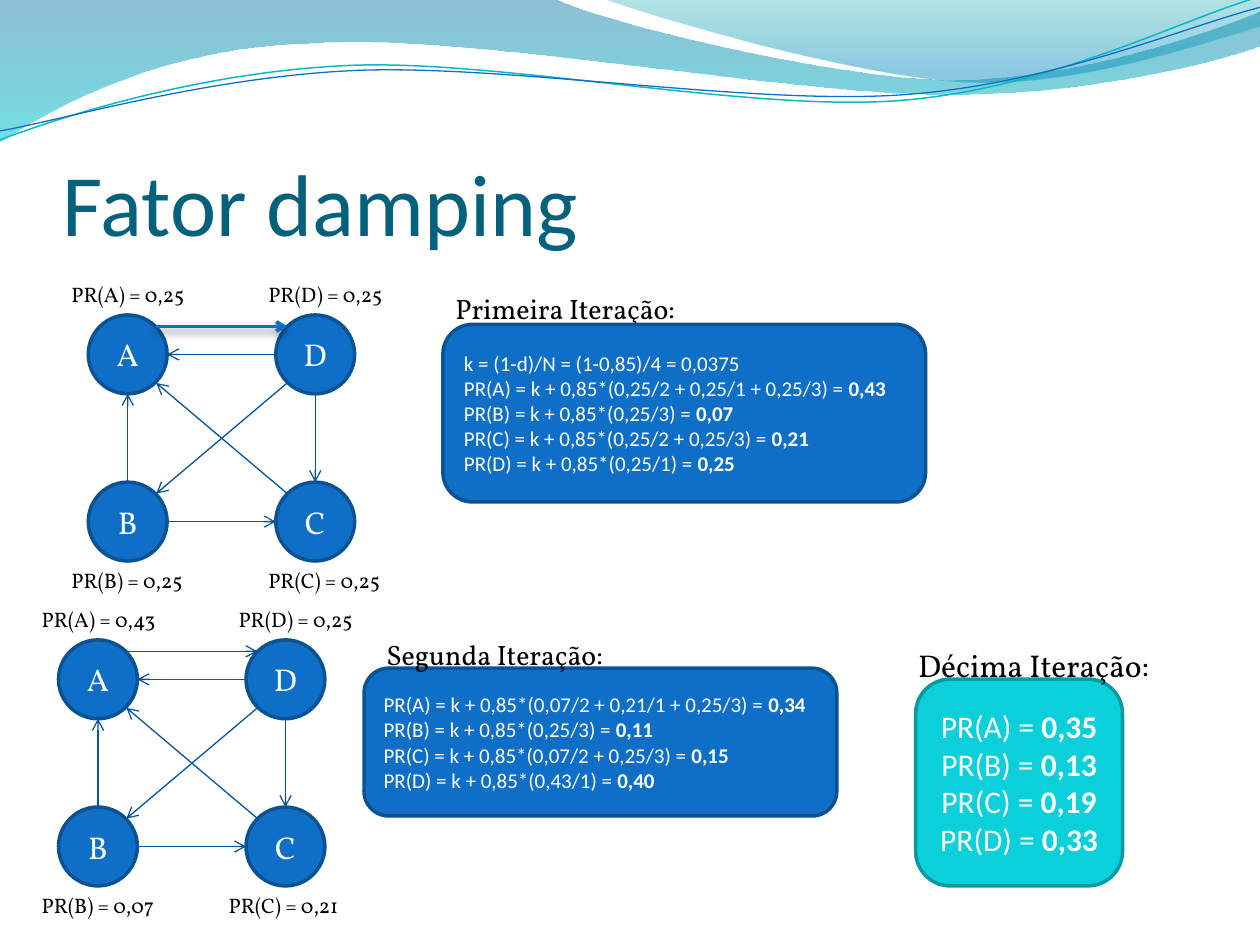
from lxml.etree import SubElement
from pptx import Presentation
from pptx.dml.color import RGBColor
from pptx.enum.shapes import MSO_CONNECTOR, MSO_SHAPE
from pptx.enum.text import MSO_ANCHOR, MSO_AUTO_SIZE, PP_ALIGN
from pptx.oxml.ns import qn
from pptx.util import Cm, Pt

INK = {
    "title": "04617B", "text": "000000", "white": "FFFFFF",
    "blue": "0F6FC6", "rim": "0B5292", "arrow": "095295",
    "cyan": "0BD0D9", "cyan rim": "089AA1", "teal": "0AB8BF",
    "sea": "0074A1", "aqua": "00C6CF", "mint": "00A1A9", "sky": "008BBF",
    "shade": "042747",
}
RGB = {name: RGBColor.from_string(code) for name, code in INK.items()}
SANS, SERIF = "Calibri", "Vollkorn"

deck = Presentation()
deck.slide_width, deck.slide_height = Cm(25.4), Cm(19.05)
slide = deck.slides.add_slide(deck.slide_layouts[6])
shapes = slide.shapes


def trace(start, parts, close):
    """Draw an outline; a part is a line end (2 numbers) or a Bézier curve (6)."""
    dots = [(Cm(x), Cm(y)) for part in parts
            for x, y in zip(part[::2], part[1::2])]
    pen = shapes.build_freeform(Cm(start[0]), Cm(start[1]))
    pen.add_line_segments(dots, close=close)
    shape = pen.convert_to_shape()
    shape.shadow.inherit = False
    legs = iter(list(shape._element.spPr.iter(qn("a:lnTo"))))
    for part in parts:
        leg = next(legs)
        if len(part) == 6:
            leg.addprevious(curve := leg.makeelement(qn("a:cubicBezTo")))
            for bit in (leg, next(legs), next(legs)):
                curve.append(bit[0])
                bit.getparent().remove(bit)
    return shape


def put(place, lines, size, font, ink, kind=None, fill=None, rim=None, mid=False):
    """Add a text box, or a filled shape of the given kind; text after | is bold."""
    box = [Cm(n) for n in place]
    if kind is None:
        shape = shapes.add_textbox(*box)
    else:
        shape = shapes.add_shape(kind, *box)
        shape.shadow.inherit = False
        shape.fill.solid()
        shape.fill.fore_color.rgb = RGB[fill]
        shape.line.color.rgb = RGB[rim]
        shape.line.width = Pt(2)
    frame = shape.text_frame
    frame.word_wrap = True
    if kind is None:
        frame.auto_size = MSO_AUTO_SIZE.SHAPE_TO_FIT_TEXT
    else:
        frame.vertical_anchor = MSO_ANCHOR.MIDDLE
    for row, line in enumerate(lines):
        para = frame.add_paragraph() if row else frame.paragraphs[0]
        para.alignment = PP_ALIGN.CENTER if mid else PP_ALIGN.LEFT
        for spot, bit in enumerate(line.split("|")):
            run = para.add_run()
            run.text = bit
            run.font.size, run.font.name = Pt(size), font
            run.font.bold = spot == 1
            run.font.color.rgb = RGB[ink]
    return frame


# Waves along the top
waves = [
    ((0, 0), [(11.18, -0.03), (12.09, 0.43, 16.87, 1.6, 19.25, 1.6),
              (21.67, 1.6, 24.33, 0.66, 25.4, 0.23), (25.43, 0.91),
              (24.97, 1.12, 22.1, 1.93, 18.95, 1.9),
              (15.8, 1.9, 9.7, 0.71, 6.53, 0.86),
              (3.28, 0.91, 1.17, 2.11, -0.03, 2.87), (0, 0)],
     [(0, "sea", 45), (1, "aqua", 55)]),
    ((12.17, -0.03), [(12.93, 0.28, 17.32, 1.57, 19.53, 1.65),
                      (21.74, 1.75, 24.41, 0.81, 25.4, 0.53), (25.4, 0),
                      (12.17, -0.03)],
     [(0, "mint", 30), (0.8, "sky", 45)]),
]
for start, parts, stops in waves:
    wave = trace(start, parts, True)
    wave.line.fill.background()
    wave.fill.gradient()
    wave.fill.gradient_angle = 270
    for stop, (spot, ink, _) in zip(wave.fill.gradient_stops, stops):
        stop.position = spot
        stop.color.rgb = RGB[ink]
    tints = wave._element.spPr.iter(qn("a:srgbClr"))
    for tint, (_, _, alpha) in zip(tints, stops):
        SubElement(tint, qn("a:alpha"), val=str(alpha * 1000))

threads = [
    ((0, 2.82), [(1.22, 2.36, 4.01, 1.45, 7.04, 1.32),
                 (10.03, 1.19, 15.06, 2.26, 18.11, 2.03),
                 (21.16, 1.8, 23.83, 0.38, 25.35, -0.05)], "teal", 0.85),
    ((0, 2.64), [(1.19, 2.44, 4.17, 1.55, 7.19, 1.42),
                 (10.24, 1.3, 15.16, 2.13, 18.21, 1.91),
                 (21.23, 1.7, 23.9, 0.53, 25.4, 0.15)], "blue", 0.75),
]
for start, parts, ink, width in threads:
    thread = trace(start, parts, False)
    thread.fill.background()
    thread.line.color.rgb = RGB[ink]
    thread.line.width = Pt(width)

title = put((1.27, 1.96, 22.86, 3.17), ["Fator damping"], 50, SANS, "title")
title.auto_size = MSO_AUTO_SIZE.NONE
title.vertical_anchor = MSO_ANCHOR.BOTTOM
title.margin_left = title.margin_right = title.margin_bottom = 0

# Two graphs of four pages; places are relative to the corner of node A
SIZE, WIDE, HIGH = 1.59, 3.78, 3.37
HALF, NEAR, FAR = SIZE / 2, 0.23, 1.37
nodes = {"A": (0, 0), "B": (0, HIGH), "C": (WIDE, HIGH), "D": (WIDE, 0)}
edges = [
    (WIDE, HALF, SIZE, HALF),
    (WIDE + NEAR, HIGH + NEAR, FAR, FAR),
    (HALF, HIGH, HALF, SIZE),
    (WIDE + HALF, SIZE, WIDE + HALF, HIGH),
    (WIDE + NEAR, FAR, FAR, HIGH + NEAR),
    (SIZE, HIGH + HALF, WIDE, HIGH + HALF),
    (FAR, NEAR, WIDE + NEAR, NEAR),
]
graphs = [
    (1.78, 6.35, {"A": "0,25", "B": "0,25", "C": "0,25", "D": "0,25"}, 0, True),
    (1.18, 12.9, {"A": "0,43", "B": "0,07", "C": "0,21", "D": "0,25"}, -0.2, False),
]
for left, top, ranks, shift, strong in graphs:
    for name, (x, y) in nodes.items():
        tag_x = left + (3.38 if x else -0.59) + (shift if name == "C" else 0)
        tag_y = top + (4.96 if y else -0.79)
        put((tag_x, tag_y, 3.18, 0.76), [f"PR({name}) = {ranks[name]}"],
            12, SERIF, "text")
        put((left + x, top + y, SIZE, SIZE), [name], 18, SERIF, "white",
            MSO_SHAPE.OVAL, "blue", "rim", True)
    for edge in edges:
        ends = [Cm(n + base) for n, base in zip(edge, (left, top) * 2)]
        link = shapes.add_connector(MSO_CONNECTOR.STRAIGHT, *ends)
        bold = strong and edge == edges[-1]
        link.line.color.rgb = RGB["blue" if bold else "arrow"]
        link.line.width = Pt(2 if bold else 0.75)
        SubElement(link.line._get_or_add_ln(), qn("a:tailEnd"), type="arrow")
        glow = SubElement(link._element.spPr, qn("a:effectLst"))
        if bold:
            shade = SubElement(glow, qn("a:outerShdw"), blurRad=str(Pt(4.5)),
                               dist=str(Pt(3)), dir="5400000", rotWithShape="0")
            tint = SubElement(shade, qn("a:srgbClr"), val=INK["shade"])
            SubElement(tint, qn("a:alpha"), val="48000")

# Iterations: heading and worked values
CARD = MSO_SHAPE.ROUNDED_RECTANGLE
put((8.93, 5.76, 5.56, 0.94), ["Primeira Iteração:"], 16, SERIF, "text")
put((8.93, 6.54, 9.73, 3.58), [
    "k = (1-d)/N = (1-0,85)/4 = 0,0375",
    "PR(A) = k + 0,85*(0,25/2 + 0,25/1 + 0,25/3) = |0,43",
    "PR(B) = k + 0,85*(0,25/3) = |0,07",
    "PR(C) = k + 0,85*(0,25/2 + 0,25/3) = |0,21",
    "PR(D) = k + 0,85*(0,25/1) = |0,25",
], 12, SANS, "white", CARD, "blue", "rim")
put((7.34, 13.47, 9.53, 2.98), [
    "PR(A) = k + 0,85*(0,07/2 + 0,21/1 + 0,25/3) = |0,34",
    "PR(B) = k + 0,85*(0,25/3) = |0,11",
    "PR(C) = k + 0,85*(0,07/2 + 0,25/3) = |0,15",
    "PR(D) = k + 0,85*(0,43/1) = |0,40",
], 12, SANS, "white", CARD, "blue", "rim")
put((7.54, 12.73, 5.56, 0.94), ["Segunda Iteração:"], 16, SERIF, "text")
put((18.46, 13.69, 4.17, 4.17), [
    "PR(A) = |0,35", "PR(B) = |0,13", "PR(C) = |0,19", "PR(D) = |0,33",
], 18, SANS, "white", CARD, "cyan", "cyan rim", True)
last = put((18.26, 12.9, 5.16, 1.02), ["Décima Iteração:"], 18, SERIF, "text")
last.word_wrap = False

deck.save("out.pptx")
